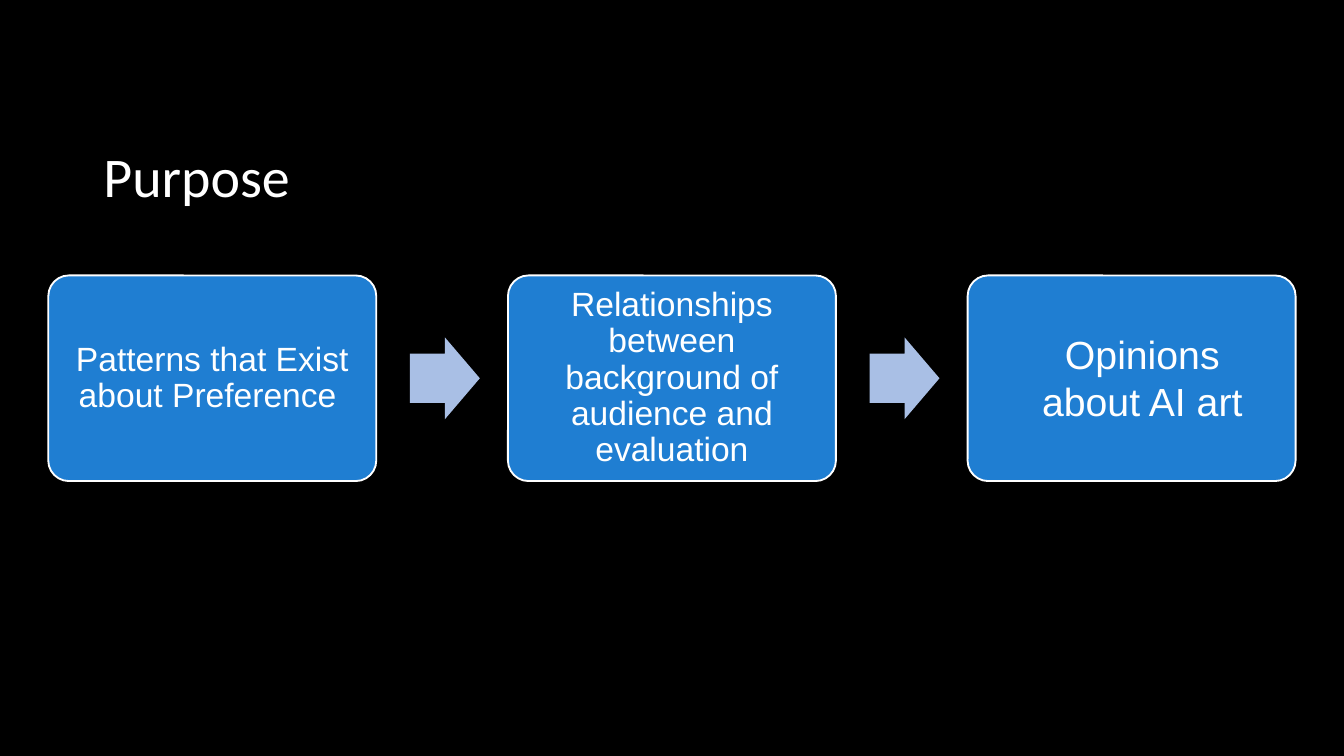
from dataclasses import dataclass

from pptx import Presentation
from pptx.dml.color import RGBColor
from pptx.enum.shapes import MSO_SHAPE
from pptx.enum.text import MSO_ANCHOR, PP_ALIGN
from pptx.util import Inches, Pt


@dataclass(frozen=True)
class Theme:
    background: str = "000000"
    text: str = "FFFFFF"
    card: str = "1F7ED2"
    arrow: str = "A9BFE5"
    heading_font: str = "Calibri"
    body_font: str = "Arial"
    heading_size: int = 30
    body_size: int = 18
    opinion_size: int = 21


THEME = Theme()


def write_text(frame, text, *, size, font=THEME.body_font, align=PP_ALIGN.CENTER,
               anchor=MSO_ANCHOR.MIDDLE, spacing=0.9, insets=(0.07, 0.07, 0.07, 0.07)):
    frame.word_wrap = True
    frame.vertical_anchor = anchor
    frame.margin_left, frame.margin_top, frame.margin_right, frame.margin_bottom = map(Inches, insets)
    paragraph = frame.paragraphs[0]
    paragraph.alignment = align
    paragraph.line_spacing = spacing
    run = paragraph.add_run()
    run.text = text
    run.font.name = font
    run.font.size = Pt(size)
    run.font.color.rgb = RGBColor.from_string(THEME.text)


def add_filled(slide, preset, box, color, adjustments):
    shape = slide.shapes.add_shape(preset, *map(Inches, box))
    shape.shadow.inherit = False
    shape.fill.solid()
    shape.fill.fore_color.rgb = RGBColor.from_string(color)
    shape.line.fill.background()
    for index, value in enumerate(adjustments):
        shape.adjustments[index] = value
    return shape


def add_heading(slide, box, text):
    heading = slide.shapes.add_textbox(*map(Inches, box))
    write_text(heading.text_frame, text, size=THEME.heading_size, font=THEME.heading_font,
               align=PP_ALIGN.LEFT, anchor=MSO_ANCHOR.TOP, spacing=1.0,
               insets=(0.07, 0.04, 0.07, 0.04))


def add_card(slide, box, text, **text_format):
    card = add_filled(slide, MSO_SHAPE.ROUNDED_RECTANGLE, box, THEME.card, [0.1])
    card.line.color.rgb = RGBColor.from_string(THEME.text)
    card.line.width = Pt(1)
    write_text(card.text_frame, text, **text_format)


def add_process(slide, box, steps):
    left, top, width, height = box
    card_width, arrow_width, arrow_height, arrow_gap = 2.44, 0.52, 0.61, 0.25
    pitch = (width - card_width) / (len(steps) - 1)
    for index, (text, text_format) in enumerate(steps):
        card_left = left + index * pitch
        add_card(slide, (card_left, top, card_width, height), text, **text_format)
        if index < len(steps) - 1:
            arrow_box = (card_left + card_width + arrow_gap,
                         top + (height - arrow_height) / 2, arrow_width, arrow_height)
            add_filled(slide, MSO_SHAPE.RIGHT_ARROW, arrow_box, THEME.arrow, [0.6, 0.5])


def main():
    presentation = Presentation()
    presentation.slide_width = Inches(10)
    presentation.slide_height = Inches(10 * 9 / 16)
    slide = presentation.slides.add_slide(presentation.slide_layouts[6])
    slide.background.fill.solid()
    slide.background.fill.fore_color.rgb = RGBColor.from_string(THEME.background)

    body = {"size": THEME.body_size}
    opinion = {"size": THEME.opinion_size, "spacing": 1.0, "insets": (0.46, 0.06, 0.3, 0.08)}
    add_heading(slide, (0.7, 1.01, 3.03, 0.58), "Purpose")
    add_process(slide, (0.36, 2.05, 9.28, 1.53), [
        ("Patterns that Exist about Preference ", body),
        ("Relationships between background of audience and evaluation", body),
        ("Opinions about AI art", opinion),
    ])
    presentation.save("out.pptx")


if __name__ == "__main__":
    main()
